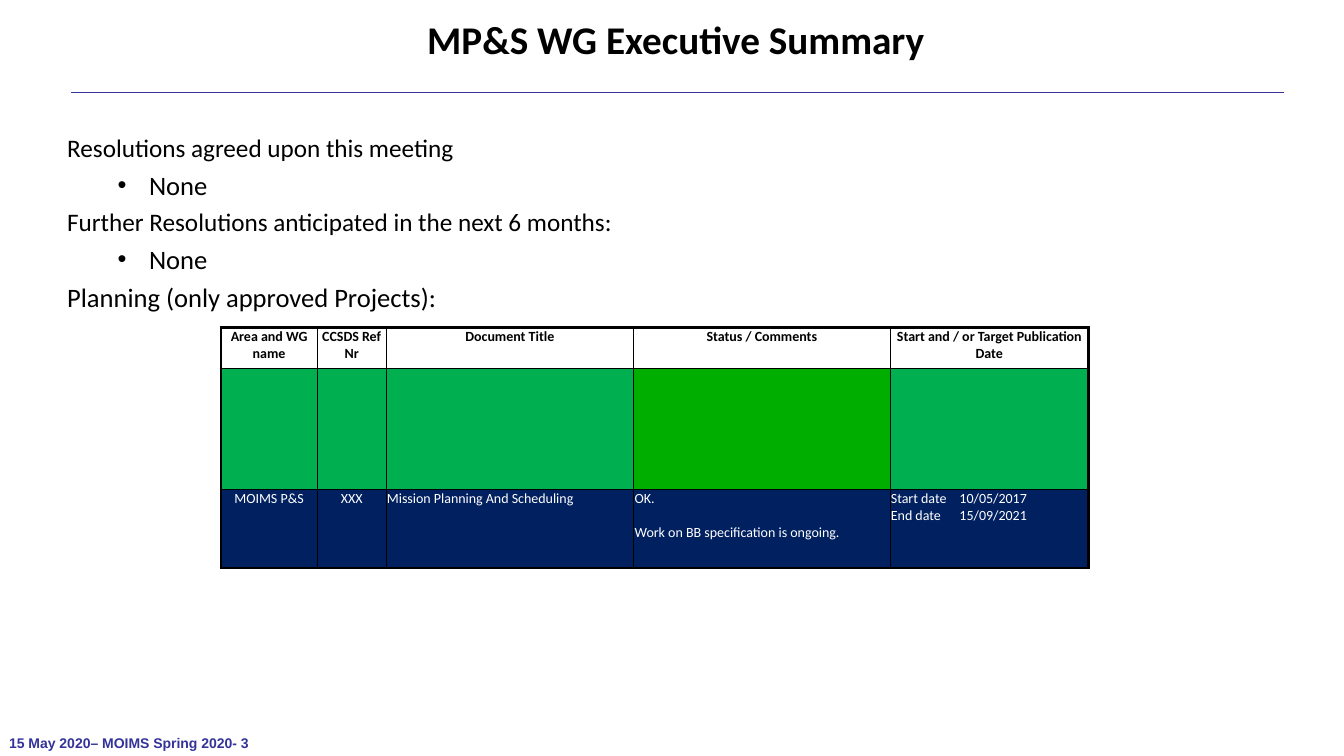
from lxml.etree import SubElement
from pptx import Presentation
from pptx.dml.color import RGBColor as RGB
from pptx.enum.shapes import MSO_CONNECTOR as CONN
from pptx.enum.text import PP_ALIGN as ALIGN
from pptx.oxml.ns import qn
from pptx.util import Pt

COLORS = {"ink": "000000", "white": "FFFFFF", "accent": "333399",
          "green": "00B050", "status": "00AE00", "navy": "002060"}
COLUMNS = [69, 49, 177, 183, 142]
ROWS = [29, 86.4, 56.2]
HEADERS = ["Area and WG name", "CCSDS Ref Nr", "Document Title",
           "Status / Comments", "Start and / or Target Publication Date"]
PROJECT = [["MOIMS P&S"], ["XXX"], ["Mission Planning And Scheduling"],
           ["OK.", "Work on BB specification is ongoing."],
           ["Start date\t10/05/2017", "End date\t15/09/2021"]]
BODY = [("Resolutions agreed upon this meeting", 18, False),
        ("None", 19, True),
        ("Further Resolutions anticipated in the next 6 months:", 18, False),
        ("None", 19, True),
        ("Planning (only approved Projects):", 19, False)]


def color(name):
    """Return the named colour."""
    return RGB.from_string(COLORS[name])


def add_run(p, text, size, ink="ink", bold=False, font="Calibri"):
    """Add a formatted run to a paragraph."""
    r = p.add_run()
    r.text = text
    r.font.size, r.font.bold, r.font.name = Pt(size), bold, font
    r.font.color.rgb = color(ink)


def add_box(slide, box, insets, wrap=True):
    """Add a text box and return its text frame."""
    tf = slide.shapes.add_textbox(*map(Pt, box)).text_frame
    tf.word_wrap = wrap
    tf.margin_left = tf.margin_right = Pt(insets[0])
    tf.margin_top = tf.margin_bottom = Pt(insets[1])
    return tf


def add_title(slide, box):
    """Place the slide title."""
    p = add_box(slide, box, (4.5, 4.5)).paragraphs[0]
    p.alignment, p.line_spacing = ALIGN.CENTER, 0.9
    p._p.get_or_add_pPr().set("marL", str(Pt(36)))
    add_run(p, "MP&S WG Executive Summary ", 28, bold=True)


def add_rule(slide, box):
    """Draw the thin line below the title."""
    left, top, width, height = box
    line = slide.shapes.add_connector(
        CONN.STRAIGHT, Pt(left), Pt(top), Pt(left + width), Pt(top + height))
    line.line.color.rgb = color("accent")
    line.line.width = Pt(0.13)
    SubElement(line._element.spPr, qn("a:effectLst"))


def add_body(slide, box):
    """Place the resolutions with their bulleted answers."""
    tf = add_box(slide, box, (4.5, 4.5))
    for i, (text, size, bulleted) in enumerate(BODY):
        p = tf.add_paragraph() if i else tf.paragraphs[0]
        p.line_spacing = 1.2
        if bulleted:
            p.level = 1
            pPr = p._p.get_or_add_pPr()
            pPr.set("marL", str(Pt(58.5)))
            pPr.set("indent", str(Pt(-22.5)))
            bullet_color = SubElement(pPr, qn("a:buClr"))
            SubElement(bullet_color, qn("a:srgbClr"), val=COLORS["ink"])
            SubElement(pPr, qn("a:buSzPct"), val="95000")
            SubElement(pPr, qn("a:buFont"), typeface="Arial")
            SubElement(pPr, qn("a:buChar"), char="•")
        add_run(p, text, size)


def set_borders(cell, row, col):
    """Draw thick outer and thin inner borders on a cell."""
    outer = {"L": col == 0, "R": col == len(COLUMNS) - 1,
             "T": row == 0, "B": row == len(ROWS) - 1}
    tcPr = cell._tc.get_or_add_tcPr()
    for i, (side, thick) in enumerate(outer.items()):
        ln = SubElement(tcPr, qn(f"a:ln{side}"), w=str(Pt(2 if thick else 0.5)))
        fill = SubElement(ln, qn("a:solidFill"))
        SubElement(fill, qn("a:srgbClr"), val=COLORS["ink"])
        tcPr.insert(i, ln)


def fill_cell(cell, lines, ink, bold, centered):
    """Write the lines of one table cell."""
    cell.margin_left = cell.margin_right = cell.margin_top = Pt(0.72)
    cell.margin_bottom = 0
    tf = cell.text_frame
    for i, line in enumerate(lines):
        p = tf.add_paragraph() if i else tf.paragraphs[0]
        p.alignment = ALIGN.CENTER if centered else ALIGN.LEFT
        if "\t" in line:
            tabs = SubElement(p._p.get_or_add_pPr(), qn("a:tabLst"))
            SubElement(tabs, qn("a:tab"), pos=str(Pt(49)), algn="l")
        elif i:
            p.space_before = Pt(12)
        add_run(p, line, 10, ink, bold)


def add_planning(slide, box):
    """Place the table of approved projects."""
    table = slide.shapes.add_table(
        len(ROWS), len(COLUMNS), *map(Pt, box)).table
    table.first_row = table.horz_banding = False
    for row, height in zip(table.rows, ROWS):
        row.height = Pt(height)
    for c, width in enumerate(COLUMNS):
        table.columns[c].width = Pt(width)
        fills = [None, "status" if c == 3 else "green", "navy"]
        for r, fill in enumerate(fills):
            cell = table.cell(r, c)
            if fill:
                cell.fill.solid()
                cell.fill.fore_color.rgb = color(fill)
            else:
                cell.fill.background()
            set_borders(cell, r, c)
        fill_cell(table.cell(0, c), [HEADERS[c]], "ink", True, True)
        fill_cell(table.cell(2, c), PROJECT[c], "white", False, c < 2)


def add_footer(slide, box):
    """Place the date, meeting and page number."""
    p = add_box(slide, box, (6.5, 3), wrap=False).paragraphs[0]
    add_run(p, "15 May 2020– MOIMS Spring 2020- 3", 10, "accent", True, "Arial")


def main():
    """Build and save the slide."""
    prs = Presentation()
    prs.slide_width, prs.slide_height = Pt(960), Pt(540)
    slide = prs.slides.add_slide(prs.slide_layouts[6])
    add_rule(slide, (51, 66, 866, 0))
    add_footer(slide, (0, 521.5, 192, 18.5))
    add_body(slide, (43.5, 85.5, 797, 416))
    add_title(slide, (189.5, 10, 556.5, 42))
    add_planning(slide, (157.7, 234, sum(COLUMNS), sum(ROWS)))
    prs.save("out.pptx")


if __name__ == "__main__":
    main()
